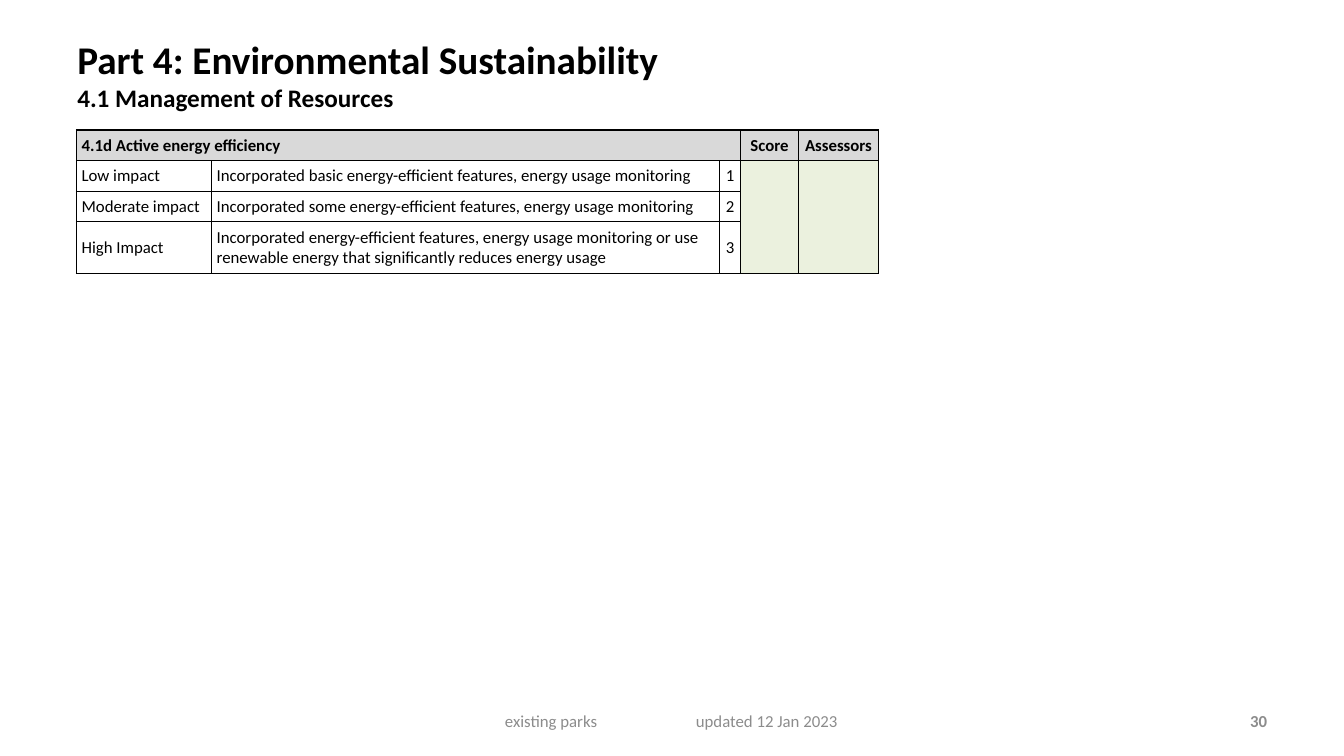
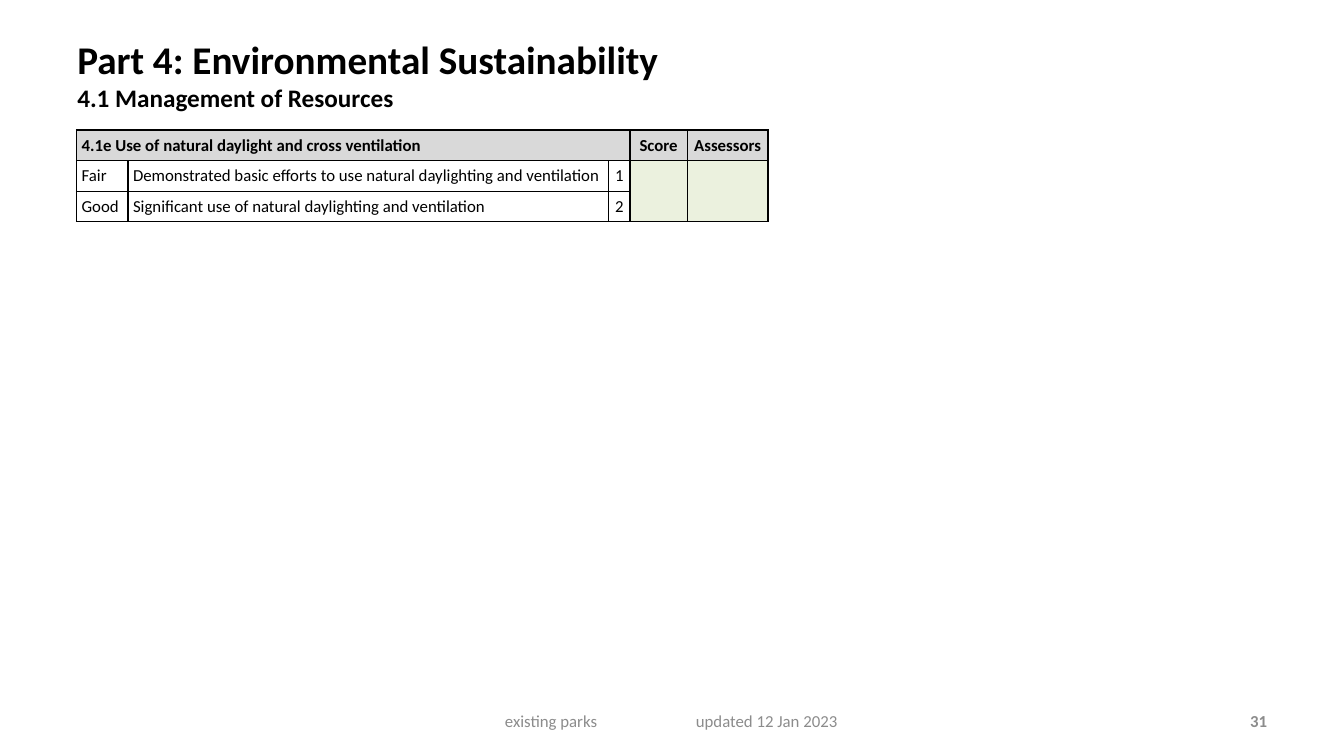
from lxml import etree
from pptx import Presentation, util as u
from pptx.dml.color import RGBColor
from pptx.enum import text
from pptx.oxml.ns import qn

BLACK = RGBColor(0x00, 0x00, 0x00)
GREY = RGBColor(0x8C, 0x8C, 0x8C)
HEADER = RGBColor(0xD9, 0xD9, 0xD9)
SCORE = RGBColor(0xEB, 0xF1, 0xDE)
UNIT = u.Inches(1) / 30
GRID_COLS, GRID_ROWS = 400, 225
LEFT, CENTER, RIGHT = text.PP_ALIGN.LEFT, text.PP_ALIGN.CENTER, text.PP_ALIGN.RIGHT
MARK_W, SCORE_W, ASSESSORS_W = 6.3, 17.1, 24
LINE_H, TWO_LINES_H = 9.1, 15.3


def grid(*lengths):
    return [u.Emu(round(n * UNIT)) for n in lengths]


class Deck:
    base = {"name": "Calibri", "size": u.Pt(12), "bold": False}

    def __init__(self):
        self.prs = Presentation()
        self.prs.slide_width, self.prs.slide_height = grid(GRID_COLS, GRID_ROWS)
        self.s = None

    def add_words(self, p, words, color=BLACK, align=LEFT, **style):
        p.alignment = align
        r = p.add_run()
        r.text = words
        for key, value in {**self.base, **style}.items():
            setattr(r.font, key, value)
        r.font.color.rgb = color

    def title(self, heading, subheading):
        self.s = self.prs.slides.add_slide(self.prs.slide_layouts[5])
        sp = self.s.shapes.title
        sp.left, sp.top, sp.width, sp.height = grid(20, 9, 310.8, 29.7)
        tf = sp.text_frame
        tf.auto_size = text.MSO_AUTO_SIZE.NONE
        tf.vertical_anchor = text.MSO_ANCHOR.TOP
        self.add_words(tf.paragraphs[0], heading, size=u.Pt(28), bold=True)
        self.add_words(tf.add_paragraph(), subheading, size=u.Pt(18), bold=True)

    def footer_box(self, left, width):
        tf = self.s.shapes.add_textbox(*grid(left, 208.5, width, 12)).text_frame
        tf.word_wrap = True
        tf.vertical_anchor = text.MSO_ANCHOR.MIDDLE
        return tf

    def footer(self, note, date, number):
        tf = self.footer_box(136.8, 126.6)
        tf.margin_left, tab = grid(13.5, 56.8)
        p = tf.paragraphs[0]
        tabs = etree.SubElement(p._p.get_or_add_pPr(), qn("a:tabLst"))
        etree.SubElement(tabs, qn("a:tab"), pos=str(tab), algn="l")
        self.add_words(p, f"{note}\t{date}", GREY)
        p = self.footer_box(286.8, 93.3).paragraphs[0]
        self.add_words(p, str(number), GREY, RIGHT, bold=True)

    def format_cell(self, cell, fill=None):
        cell.vertical_anchor = text.MSO_ANCHOR.MIDDLE
        for side in ("left", "right", "top", "bottom"):
            setattr(cell, f"margin_{side}", u.Inches(0.05))
        tc_pr = cell._tc.get_or_add_tcPr()
        for side in "LRTB":
            ln = etree.SubElement(tc_pr, qn(f"a:ln{side}"), w=str(u.Pt(1)))
            solid = etree.SubElement(ln, qn("a:solidFill"))
            etree.SubElement(solid, qn("a:srgbClr"), val=str(BLACK))
        if fill is None:
            cell.fill.background()
        else:
            cell.fill.solid()
            cell.fill.fore_color.rgb = fill

    def table(self, criterion, level_w, description_w, levels):
        widths = [level_w, description_w, MARK_W, SCORE_W, ASSESSORS_W]
        heights = [LINE_H] + [height for _, _, height in levels]
        frame = self.s.shapes.add_table(
            len(heights), len(widths), *grid(22.8, 38.7, sum(widths), sum(heights)))
        tbl = frame.table
        tbl.first_row = tbl.horz_banding = False
        for column, width in zip(tbl.columns, grid(*widths)):
            column.width = width
        for row, height in zip(tbl.rows, grid(*heights)):
            row.height = height

        rows = [(criterion, "", "", "Score", "Assessors")]
        rows += [(level, description, str(mark), "", "")
                 for mark, (level, description, _) in enumerate(levels, 1)]
        for i, row in enumerate(rows):
            for j, words in enumerate(row):
                cell = tbl.cell(i, j)
                self.format_cell(cell, HEADER if i == 0 else SCORE if j > 2 else None)
                p = cell.text_frame.paragraphs[0]
                if words:
                    self.add_words(p, words, align=CENTER if j > 1 else LEFT, bold=i == 0)
                else:
                    p._p.get_or_add_endParaRPr().set("sz", "1200")

        tbl.cell(0, 0).merge(tbl.cell(0, 2))
        for j in (3, 4):
            tbl.cell(1, j).merge(tbl.cell(len(levels), j))


PAGES = [
    ("4.1d Active energy efficiency", 40.2, 151.2, [
        ("Low impact",
         "Incorporated basic energy-efficient features, energy usage monitoring", LINE_H),
        ("Moderate impact",
         "Incorporated some energy-efficient features, energy usage monitoring", LINE_H),
        ("High Impact",
         "Incorporated energy-efficient features, energy usage monitoring or use "
         "renewable energy that significantly reduces energy usage", TWO_LINES_H),
    ]),
    ("4.1e Use of natural daylight and cross ventilation", 15.3, 143.1, [
        ("Fair",
         "Demonstrated basic efforts to use natural daylighting and ventilation", LINE_H),
        ("Good", "Significant use of natural daylighting and ventilation", LINE_H),
    ]),
]


def main():
    deck = Deck()
    for number, page in enumerate(PAGES, 30):
        deck.title("Part 4: Environmental Sustainability", "4.1 Management of Resources")
        deck.table(*page)
        deck.footer("existing parks", "updated 12 Jan 2023", number)
    deck.prs.save("out.pptx")


if __name__ == "__main__":
    main()
